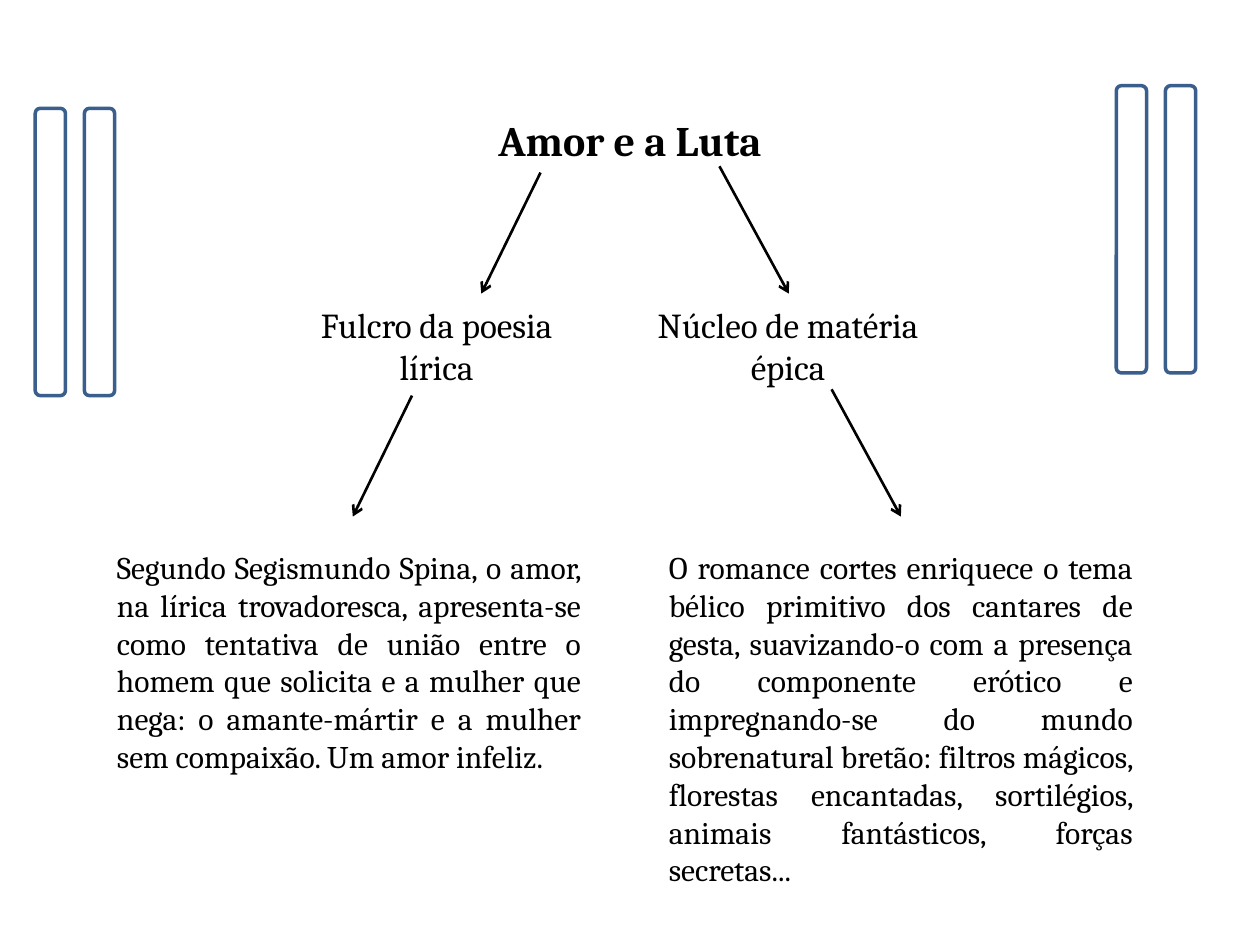
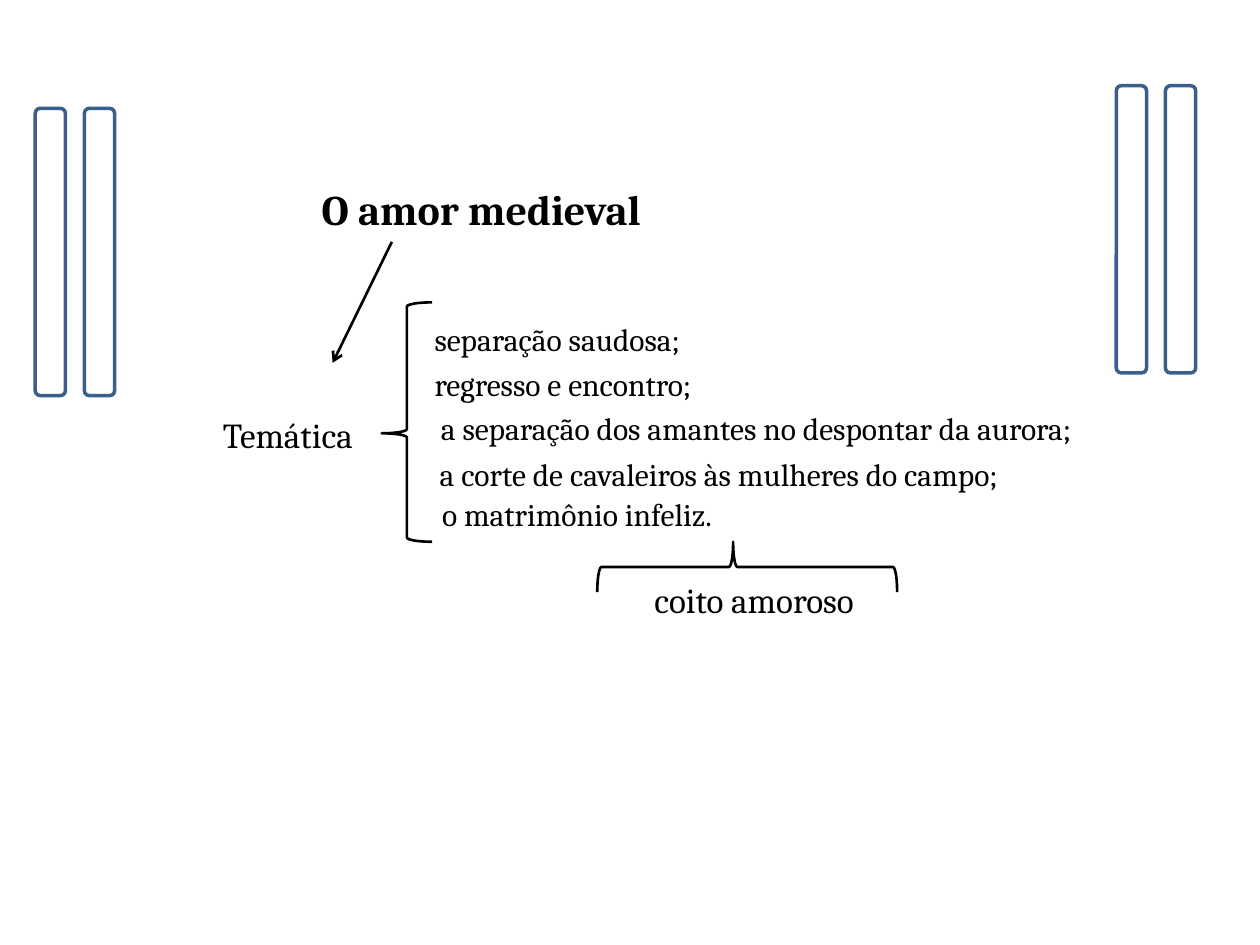
from dataclasses import dataclass

from lxml.etree import SubElement
from pptx import Presentation
from pptx.dml.color import RGBColor
from pptx.enum.shapes import MSO_CONNECTOR, MSO_SHAPE
from pptx.enum.text import PP_ALIGN
from pptx.oxml.ns import qn
from pptx.slide import Slide
from pptx.util import Inches, Pt

COLORS = {"ink": "000000", "paper": "FFFFFF", "bar": "3A5F8C"}
FONT = "Cambria"


@dataclass
class Label:
    text: str
    left: float
    top: float
    width: float
    height: float
    size: int = 20
    align: PP_ALIGN = PP_ALIGN.CENTER
    bold: bool = False


@dataclass
class Arrow:
    x: float
    y: float
    dx: float
    dy: float


@dataclass
class Brace:
    left: float
    top: float
    height: float
    turn: int = 0


def paint(name: str) -> RGBColor:
    return RGBColor.from_string(COLORS[name])


def add_label(slide: Slide, label: Label) -> None:
    box = slide.shapes.add_textbox(Inches(label.left), Inches(label.top),
                                   Inches(label.width), Inches(label.height))
    box.text_frame.word_wrap = True
    para = box.text_frame.paragraphs[0]
    para.text = label.text
    para.alignment = label.align
    para.font.name = FONT
    para.font.size = Pt(label.size)
    para.font.bold = label.bold
    para.font.color.rgb = paint("ink")


def add_arrow(slide: Slide, arrow: Arrow) -> None:
    line = slide.shapes.add_connector(
        MSO_CONNECTOR.STRAIGHT, Inches(arrow.x), Inches(arrow.y),
        Inches(arrow.x + arrow.dx), Inches(arrow.y + arrow.dy))
    line.line.color.rgb = paint("ink")
    line.line.width = Pt(1.5)
    props = line._element.spPr
    SubElement(props.find(qn("a:ln")), qn("a:tailEnd"), type="arrow")
    SubElement(props, qn("a:effectLst"))


def add_brace(slide: Slide, brace: Brace) -> None:
    shape = slide.shapes.add_shape(
        MSO_SHAPE.LEFT_BRACE, Inches(brace.left), Inches(brace.top),
        Inches(0.4), Inches(brace.height))
    shape.adjustments[0] = 0.083
    shape.adjustments[1] = 0.547
    shape.rotation = brace.turn
    shape.shadow.inherit = False
    shape.fill.background()
    shape.line.color.rgb = paint("ink")
    shape.line.width = Pt(1.5)


def add_bars(slide: Slide) -> None:
    """Draw the pair of bars at each side of the slide."""
    for left, top in ((0.28, 0.86), (8.86, 0.68)):
        for step in range(2):
            bar = slide.shapes.add_shape(
                MSO_SHAPE.ROUNDED_RECTANGLE, Inches(left + 0.39 * step),
                Inches(top), Inches(0.24), Inches(2.28))
            bar.shadow.inherit = False
            bar.fill.solid()
            bar.fill.fore_color.rgb = paint("paper")
            bar.line.color.rgb = paint("bar")
            bar.line.width = Pt(2)


def add_page(deck: Presentation, title: str, left: float, top: float) -> Slide:
    slide = deck.slides.add_slide(deck.slide_layouts[6])
    add_bars(slide)
    add_label(slide, Label(title, left, top, 3.94, 0.5, 24, bold=True))
    return slide


def topic(text: str, left: float, top: float, height: float = 0.44) -> Label:
    return Label(text, left, top, 2.29, height)


def prose(text: str, left: float, height: float) -> Label:
    return Label(text, left, 4.3, 3.88, height, 18, PP_ALIGN.JUSTIFY)


def build_love(deck: Presentation) -> None:
    slide = add_page(deck, "Amor e a Luta", 3.03, 0.86)

    # Two branches, each with a topic and its text
    for label in (
        topic("Fulcro da poesia lírica", 2.32, 2.36, 0.77),
        topic("Núcleo de matéria épica", 5.11, 2.36, 0.77),
        prose("Segundo Segismundo Spina, o amor, na lírica trovadoresca, "
              "apresenta-se como tentativa de união entre o homem que "
              "solicita e a mulher que nega: o amante-mártir e a mulher sem "
              "compaixão. Um amor infeliz.", 0.83, 2.22),
        prose("O romance cortes enriquece o tema bélico primitivo dos "
              "cantares de gesta, suavizando-o com a presença do componente "
              "erótico e impregnando-se do mundo sobrenatural bretão: "
              "filtros mágicos, florestas encantadas, sortilégios, animais "
              "fantásticos, forças secretas...", 5.21, 2.83),
    ):
        add_label(slide, label)

    # Arrows down the left and the right branch
    for x, y in ((4.29, 1.37), (3.27, 3.14)):
        add_arrow(slide, Arrow(x, y, -0.47, 0.96))
    for x, y in ((5.71, 1.32), (6.6, 3.09)):
        add_arrow(slide, Arrow(x, y, 0.55, 1.01))


def build_themes(deck: Presentation) -> None:
    slide = add_page(deck, "O amor medieval", 1.85, 1.41)
    add_arrow(slide, Arrow(3.11, 1.92, -0.47, 0.96))
    add_label(slide, topic("Temática", 1.14, 3.23))

    # Themes held by the brace
    add_brace(slide, Brace(3.03, 2.4, 1.9))
    for text, left, top in (
        ("separação saudosa;", 3.35, 2.49),
        ("regresso e encontro;", 3.35, 2.85),
        ("a separação dos amantes no despontar da aurora;", 3.4, 3.2),
        ("a corte de cavaleiros às mulheres do campo;", 3.39, 3.56),
        ("o matrimônio infeliz.", 3.41, 3.88),
    ):
        add_label(slide, Label(text, left, top, 5.89, 0.4, 18, PP_ALIGN.LEFT))

    # Closing note under the turned brace
    add_brace(slide, Brace(5.73, 3.31, 2.38, 90))
    add_label(slide, topic("coito amoroso", 4.84, 4.54))


def main() -> None:
    deck = Presentation()
    deck.slide_width, deck.slide_height = Inches(10), Inches(7.5)
    build_love(deck)
    build_themes(deck)
    deck.save("out.pptx")


if __name__ == "__main__":
    main()
